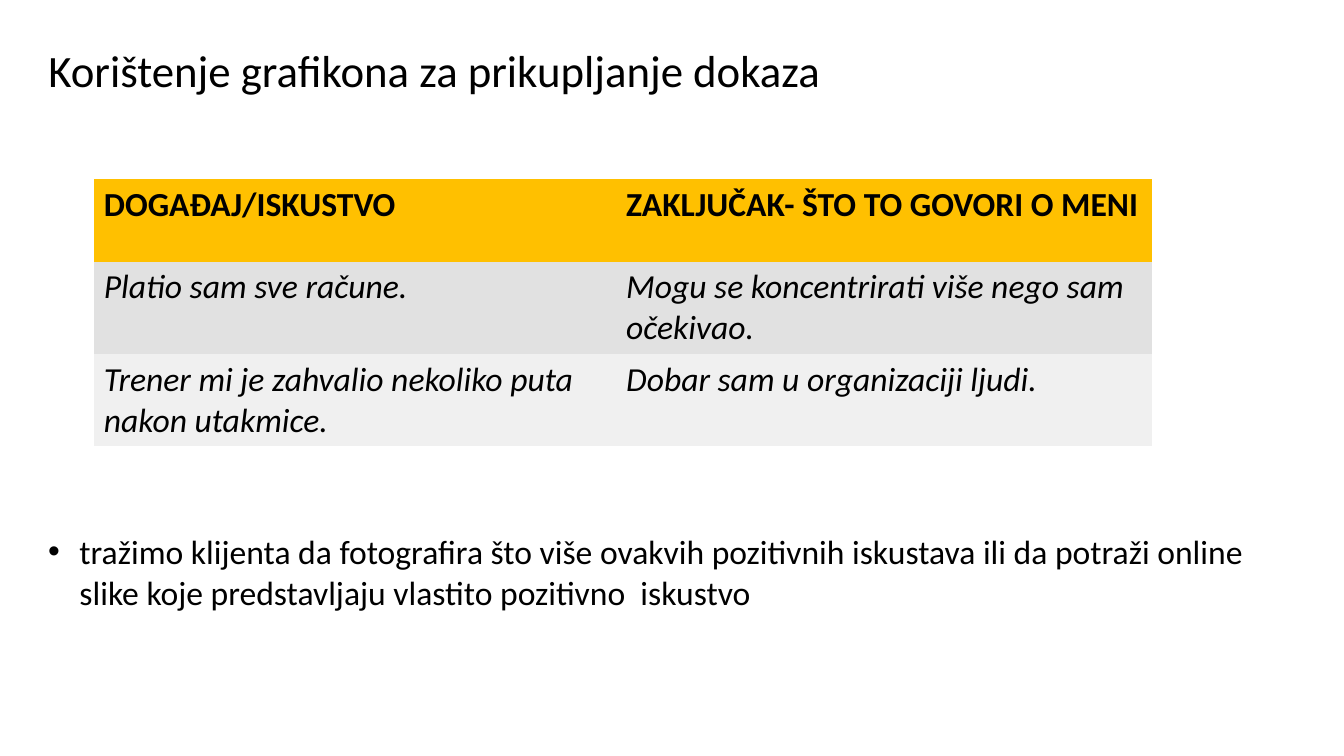
import pptx
import pptx.util
import pptx.dml.color
import pptx.enum.text
import pptx.oxml.ns
import lxml.etree

Inches = pptx.util.Inches
qn = pptx.oxml.ns.qn

TITLE = "Korištenje grafikona za prikupljanje dokaza"
ROWS = [
    ("DOGAĐAJ/ISKUSTVO", "ZAKLJUČAK- ŠTO TO GOVORI O MENI"),
    ("Platio sam sve račune.", "Mogu se koncentrirati više nego sam očekivao."),
    ("Trener mi je zahvalio nekoliko puta nakon utakmice.", "Dobar sam u organizaciji ljudi."),
]
ADVICE = (
    "tražimo klijenta da fotografira što više ovakvih pozitivnih iskustava ili da potraži online "
    "slike koje predstavljaju vlastito pozitivno  iskustvo"
)

COLORS = {"text": "000000", "header": "FFC000", "dark_row": "E1E1E1", "light_row": "F0F0F0"}
ROW_FILLS = ["header", "dark_row", "light_row"]
COLUMN_WIDTHS = [5.18, 5.32]
ROW_HEIGHT = 0.82
BULLET_INDENT = 0.31
NO_STYLE_NO_GRID = "{2D5ABB26-0587-4C30-8999-92F81FD0307C}"


def color(name):
    return pptx.dml.color.RGBColor.from_string(COLORS[name])


def set_font(paragraph, size, bold=False, italic=False):
    font = paragraph.font
    font.name = "Calibri"
    font.size = pptx.util.Pt(size)
    font.bold = bold
    font.italic = italic
    font.color.rgb = color("text")


def add_title(slide):
    title = slide.shapes.title
    title.left, title.top = Inches(0.38), Inches(0.14)
    title.width, title.height = Inches(11.5), Inches(1.17)
    frame = title.text_frame
    frame.text = TITLE
    frame.word_wrap = True
    frame.vertical_anchor = pptx.enum.text.MSO_ANCHOR.MIDDLE
    paragraph = frame.paragraphs[0]
    paragraph.alignment = pptx.enum.text.PP_ALIGN.LEFT
    paragraph.line_spacing = 0.9
    set_font(paragraph, 32)


def add_evidence_table(slide):
    shape = slide.shapes.add_table(
        len(ROWS), len(COLUMN_WIDTHS), Inches(0.93), Inches(1.78),
        Inches(sum(COLUMN_WIDTHS)), Inches(ROW_HEIGHT * len(ROWS)),
    )
    next(shape.element.iter(qn("a:tableStyleId"))).text = NO_STYLE_NO_GRID
    table = shape.table
    for column, width in zip(table.columns, COLUMN_WIDTHS):
        column.width = Inches(width)
    for row_index, texts in enumerate(ROWS):
        table.rows[row_index].height = Inches(ROW_HEIGHT)
        is_header = row_index == 0
        for column_index, text in enumerate(texts):
            cell = table.cell(row_index, column_index)
            cell.text = text
            cell.fill.solid()
            cell.fill.fore_color.rgb = color(ROW_FILLS[row_index])
            set_font(cell.text_frame.paragraphs[0], 24, bold=is_header, italic=not is_header)


def add_advice(slide):
    box = slide.shapes.add_textbox(Inches(0.38), Inches(5.22), Inches(12.31), Inches(0.91))
    frame = box.text_frame
    frame.word_wrap = True
    frame.auto_size = pptx.enum.text.MSO_AUTO_SIZE.SHAPE_TO_FIT_TEXT
    frame.text = ADVICE
    paragraph = frame.paragraphs[0]
    properties = paragraph._p.get_or_add_pPr()
    properties.set("marL", str(Inches(BULLET_INDENT)))
    properties.set("indent", str(-Inches(BULLET_INDENT)))
    lxml.etree.SubElement(properties, qn("a:buFont"), typeface="Arial")
    lxml.etree.SubElement(properties, qn("a:buChar"), char="•")
    set_font(paragraph, 24)


def main():
    presentation = pptx.Presentation()
    presentation.slide_width, presentation.slide_height = Inches(13.33), Inches(7.5)
    slide = presentation.slides.add_slide(presentation.slide_layouts.get_by_name("Title Only"))
    add_title(slide)
    add_evidence_table(slide)
    add_advice(slide)
    presentation.save("out.pptx")


if __name__ == "__main__":
    main()
